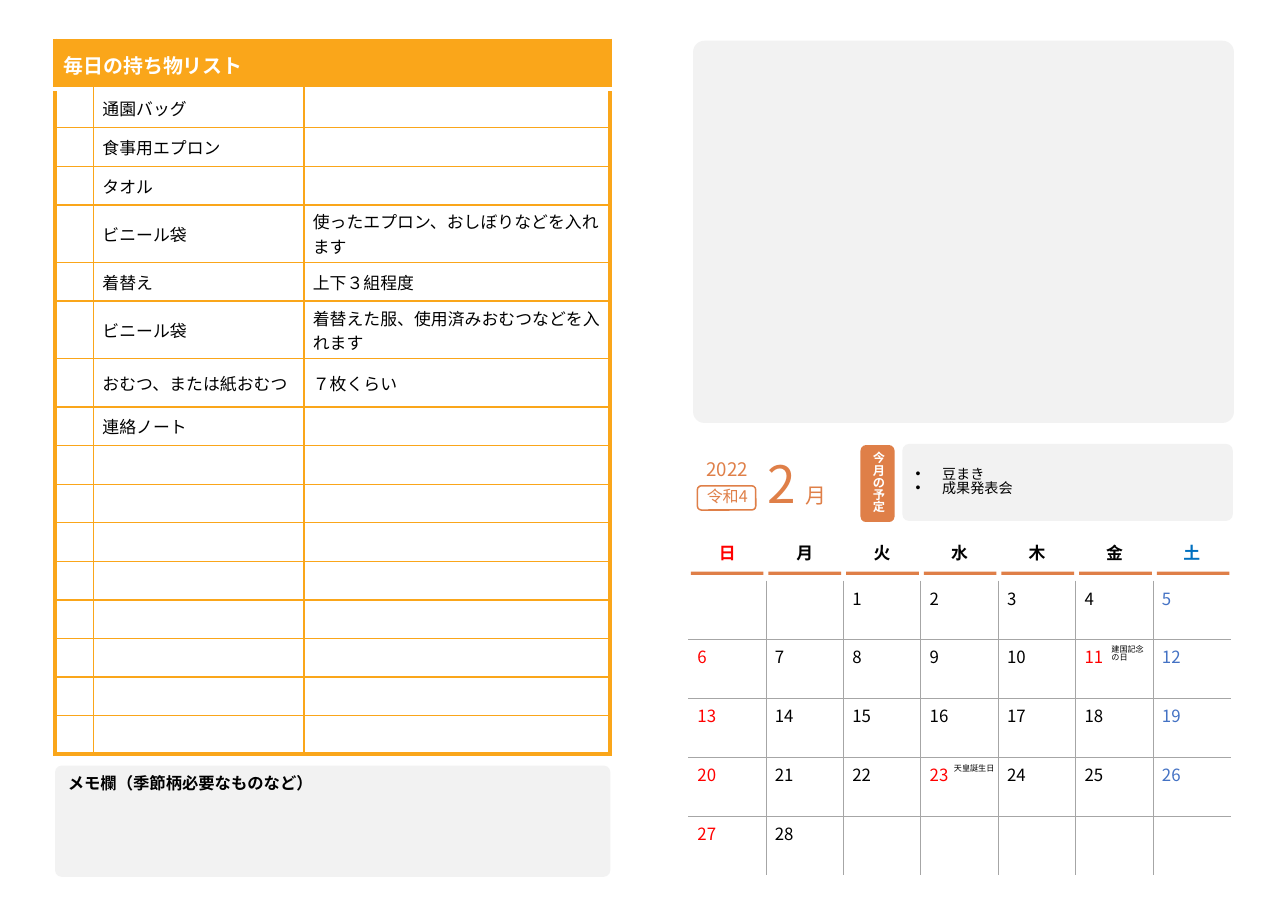
from lxml.etree import SubElement
from pptx import Presentation
from pptx.dml.color import RGBColor
from pptx.enum.shapes import MSO_SHAPE as Shape
from pptx.enum.text import MSO_ANCHOR as Anchor, MSO_AUTO_SIZE as AutoSize, PP_ALIGN as Align
from pptx.oxml.ns import qn
from pptx.util import Inches, Pt

ORANGE, ACCENT, PANEL, GRID = "FAA61A", "DF7F48", "F2F2F2", "A6A6A6"
WHITE, BLACK, RED, SATURDAY, SATURDAY_HEAD = "FFFFFF", "000000", "FF0000", "4472C4", "0070C0"
TIGHT = 0.88


def rgb(value):
    return RGBColor.from_string(value)


def apply(target, formats):
    for attribute, value in formats.items():
        setattr(target, attribute, value)


class Planner:
    """Holds the font and the current slide; one method per kind of element."""

    def __init__(self, slide, font="Noto Sans CJK JP"):
        self.slide, self.shapes, self.font = slide, slide.shapes, font

    def add_lines(self, frame, lines, size, color=BLACK, bold=False, **paragraph_formats):
        for index, line in enumerate(lines):
            paragraph = frame.add_paragraph() if index else frame.paragraphs[0]
            apply(paragraph, paragraph_formats)
            run = paragraph.add_run()
            run.text = line
            apply(run.font, {"size": Pt(size), "bold": bold, "name": self.font})
            run.font.color.rgb = rgb(color)
            SubElement(run.font._element, qn("a:ea"), typeface=self.font)

    def panel(self, box, fill=None, line=None, radius=None, kind=Shape.ROUNDED_RECTANGLE):
        shape = self.shapes.add_shape(kind, *map(Inches, box))
        shape.shadow.inherit = False
        if radius is not None:
            shape.adjustments[0] = radius
        if fill:
            shape.fill.solid()
            shape.fill.fore_color.rgb = rgb(fill)
        else:
            shape.fill.background()
        if line:
            shape.line.color.rgb = rgb(line)
            shape.line.width = Pt(1)
        else:
            shape.line.fill.background()
        return shape

    def text(self, box, lines, size, color=BLACK, wrap=True, **paragraph_formats):
        frame = self.shapes.add_textbox(*map(Inches, box)).text_frame
        frame.word_wrap = wrap
        self.add_lines(frame, lines, size, color, **paragraph_formats)

    def placeholder(self, holder, box, lines, size, color=BLACK, anchor=Anchor.TOP, **paragraph_formats):
        apply(holder, dict(zip(("left", "top", "width", "height"), map(Inches, box))))
        apply(holder.text_frame, {"word_wrap": True, "auto_size": AutoSize.NONE, "vertical_anchor": anchor})
        self.add_lines(holder.text_frame, lines, size, color, **paragraph_formats)
        self.shapes._spTree.append(holder._element)  # bring in front of the panels

    def table(self, left, top, widths, heights):
        grid = self.shapes.add_table(len(heights), len(widths), Inches(left), Inches(top),
                                     Inches(sum(widths)), Inches(sum(heights))).table
        apply(grid, {"first_row": False, "horz_banding": False})
        for column, width in zip(grid.columns, widths):
            column.width = Inches(width)
        for row, height in zip(grid.rows, heights):
            row.height = Inches(height)
        return grid

    def cell(self, cell, text, borders, color=BLACK, bold=False, size=11, fill=None,
             anchor=Anchor.MIDDLE, align=Align.LEFT):
        apply(cell, {"margin_left": Inches(0.08), "margin_right": Inches(0.08), "margin_top": Inches(0.04),
                     "margin_bottom": Inches(0.04), "vertical_anchor": anchor})
        properties = cell._tc.get_or_add_tcPr()
        for side in "LRTB":
            line_color, width = borders[side]
            line = SubElement(properties, qn(f"a:ln{side}"), w=str(Pt(width)))
            SubElement(SubElement(line, qn("a:solidFill")), qn("a:srgbClr"), val=line_color)
        if fill:
            cell.fill.solid()
            cell.fill.fore_color.rgb = rgb(fill)
        else:
            cell.fill.background()
        if text:
            self.add_lines(cell.text_frame, [text], size, color, bold, alignment=align)
        else:
            SubElement(cell.text_frame.paragraphs[0]._p, qn("a:endParaRPr"), sz=str(size * 100))


def belongings(planner):
    items = [("通園バッグ", ""), ("食事用エプロン", ""), ("タオル", ""),
             ("ビニール袋", "使ったエプロン、おしぼりなどを入れます"), ("着替え", "上下３組程度"),
             ("ビニール袋", "着替えた服、使用済みおむつなどを入れます"),
             ("おむつ、または紙おむつ", "７枚くらい"), ("連絡ノート", "")]
    items += [("", "")] * (16 - len(items))
    heights = [0.44 if row in (0, 4, 6, 7) else 0.35 for row in range(17)]
    checklist = planner.table(0.5, 0.37, [0.35, 1.91, 2.78], heights)
    thick, thin, gap = (ORANGE, 3), (ORANGE, 1), (WHITE, 3)
    checklist.cell(0, 0).merge(checklist.cell(0, 2))
    for column in range(3):
        planner.cell(checklist.cell(0, column), "" if column else "毎日の持ち物リスト",
                     {"L": thick, "R": thick, "T": thick, "B": gap}, WHITE, True, 13, ORANGE)
    for row, (item, note) in enumerate(items, 1):
        for column, text in enumerate(("", item, note)):
            planner.cell(checklist.cell(row, column), text,
                         {"L": thin if column else thick, "R": thick if column == 2 else thin,
                          "T": gap if row == 1 else thin, "B": thick if row == 16 else thin})


def calendar(planner):
    first_weekday, days, holidays = 2, 28, (11, 23)
    month = planner.table(6.25, 4.74, [4.92 / 7] * 7, [3.21 / 6] * 6)
    blank, rule = (WHITE, 0.75), (GRID, 0.75)
    for column, weekday in enumerate("日月火水木金土"):
        color = {0: RED, 6: SATURDAY_HEAD}.get(column, BLACK)
        planner.cell(month.cell(0, column), weekday,
                     {"L": (WHITE, 1), "R": (WHITE, 1), "T": (WHITE, 1), "B": blank},
                     color, True, align=Align.CENTER)
    for slot in range(35):
        week, column = divmod(slot, 7)
        day = slot - first_weekday + 1
        color = RED if column == 0 or day in holidays else SATURDAY if column == 6 else BLACK
        planner.cell(month.cell(week + 1, column), str(day) if 1 <= day <= days else "",
                     {"L": rule if column else blank, "R": blank if column == 6 else rule,
                      "T": rule if week else blank, "B": blank if week == 4 else rule},
                     color, anchor=Anchor.TOP)


def main():
    deck = Presentation()
    apply(deck, {"slide_width": Inches(11.69), "slide_height": Inches(8.27)})
    slide = deck.slides.add_slide(deck.slide_layouts[1])
    planner = Planner(slide)
    month_title, events = slide.placeholders

    # Open area and events of the month
    planner.panel((6.29, 0.37, 4.91, 3.47), PANEL, radius=0.03)
    planner.panel((8.19, 4.03, 3, 0.7), PANEL, radius=0.09)
    planner.placeholder(events, (8.21, 4.03, 2.96, 0.7), ["豆まき", "成果発表会"], 9.2, anchor=Anchor.MIDDLE,
                        line_spacing=0.83, space_before=Pt(0))
    for paragraph in events.text_frame.paragraphs:
        bullet = paragraph._p.get_or_add_pPr()
        bullet.set("marL", str(Inches(0.24)))
        bullet.set("indent", str(Inches(-0.24)))
        SubElement(bullet, qn("a:buChar"), char="•")
    events_label = planner.panel((7.81, 4.04, 0.31, 0.7), ACCENT).text_frame
    apply(events_label, {"word_wrap": True, "vertical_anchor": Anchor.MIDDLE})
    planner.add_lines(events_label, ["今月の予定"], 8, WHITE, True, alignment=Align.CENTER, line_spacing=Pt(8))

    # Checklist and memo
    belongings(planner)
    memo = planner.panel((0.5, 6.95, 5.04, 1.01), PANEL, radius=0.06).text_frame
    apply(memo, {"word_wrap": True, "vertical_anchor": Anchor.TOP})
    planner.add_lines(memo, ["メモ欄（季節柄必要なものなど）"], 10.7, bold=True, alignment=Align.LEFT)

    # Month heading
    planner.placeholder(month_title, (6.87, 4.13, 0.53, 0.67), ["2"], 33.6, ACCENT,
                        alignment=Align.LEFT, line_spacing=TIGHT)
    planner.text((7.21, 4.36, 0.39, 0.33), ["月"], 13.7, ACCENT, wrap=False, line_spacing=TIGHT)
    for top, year, size in ((4.39, "令和4", 10.5), (4.13, "2022", 12.2)):
        planner.text((6.29, top, 0.62, 0.3), [year], size, ACCENT, alignment=Align.CENTER, line_spacing=TIGHT)
    planner.panel((6.33, 4.41, 0.53, 0.22), line=ACCENT)

    # Calendar with weekday bars and holiday names
    for column in range(7):
        planner.panel((6.27 + column * 0.705, 5.19, 0.66, 0.03), ACCENT, kind=Shape.RECTANGLE)
    calendar(planner)
    planner.text((9.99, 5.82, 0.54, 0.28), ["建国記念", "の日"], 5.3, line_spacing=0.8)
    planner.text((8.56, 6.9, 0.61, 0.19), ["天皇誕生日"], 5.3, line_spacing=0.8)

    deck.save("out.pptx")


if __name__ == "__main__":
    main()
